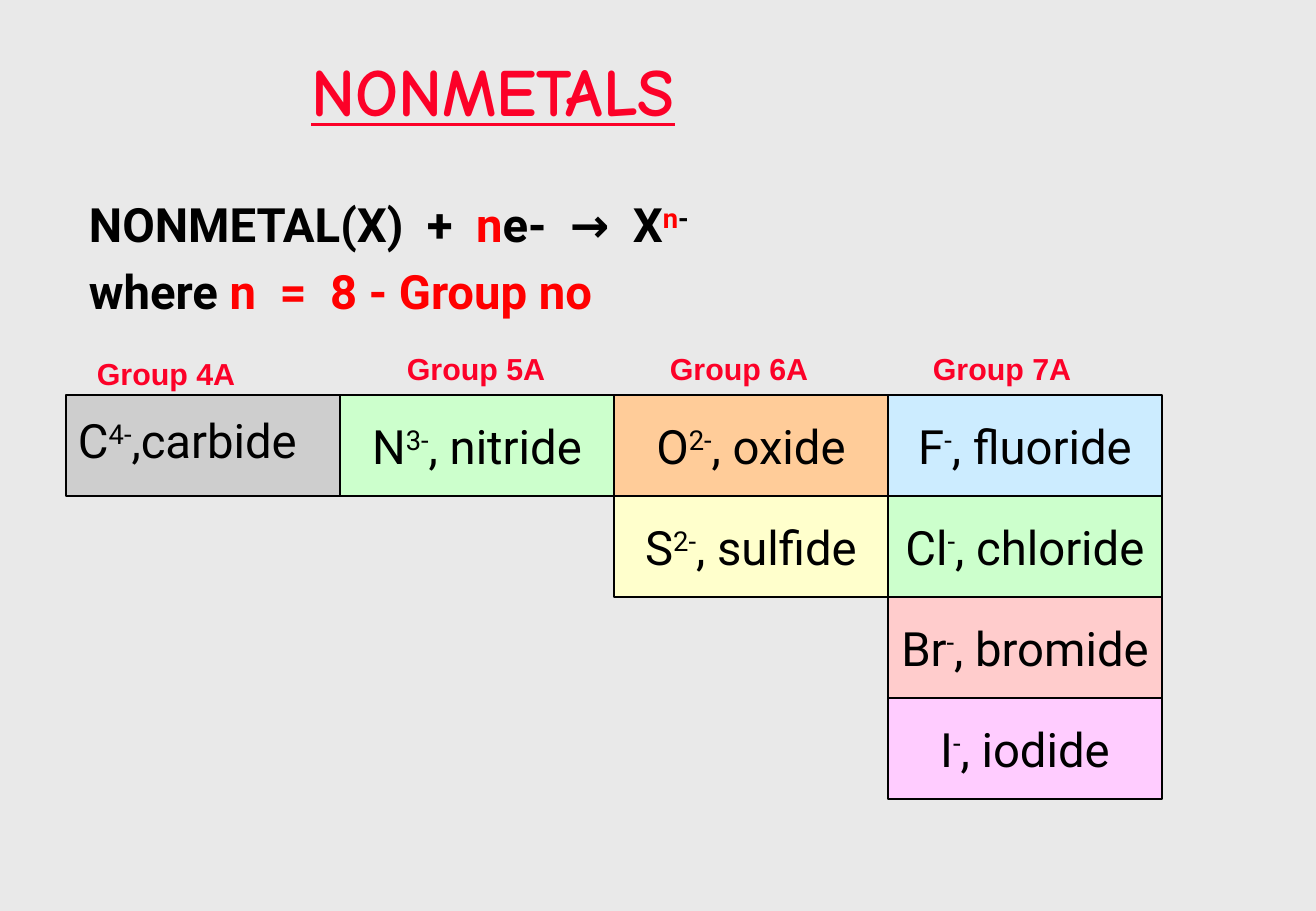
from lxml import etree
from pptx import Presentation
from pptx.dml.color import RGBColor
from pptx.enum.shapes import MSO_SHAPE
from pptx.enum.text import MSO_ANCHOR, PP_ALIGN
from pptx.oxml.ns import qn
from pptx.util import Emu, Pt

RECTANGLE = MSO_SHAPE.RECTANGLE
TOP, MIDDLE = MSO_ANCHOR.TOP, MSO_ANCHOR.MIDDLE
LEFT, CENTER = PP_ALIGN.LEFT, PP_ALIGN.CENTER

EMU_PER_PX = 7526
BACKGROUND = RGBColor(0xE9, 0xE9, 0xE9)
BLACK = RGBColor(0x00, 0x00, 0x00)
CRIMSON = RGBColor(0xFC, 0x01, 0x28)
RED = RGBColor(0xFF, 0x00, 0x00)
GREY = RGBColor(0xCE, 0xCE, 0xCE)
GREEN = RGBColor(0xCC, 0xFF, 0xCC)
ORANGE = RGBColor(0xFF, 0xCC, 0x99)
YELLOW = RGBColor(0xFF, 0xFF, 0xCC)
BLUE = RGBColor(0xCC, 0xEC, 0xFF)
PINK = RGBColor(0xFF, 0xCC, 0xCC)
VIOLET = RGBColor(0xFF, 0xCC, 0xFF)

GRID_LEFT, GRID_TOP = 66, 395
CELL_WIDTH, CELL_HEIGHT = 274, 101

GROUP_LABELS = [
    ("Group 4A", 85, 349),
    ("Group 5A", 395, 344),
    ("Group 6A", 658, 344),
    ("Group 7A", 921, 344),
]
IONS = [
    (1, 0, GREEN, "N", "3-", ", nitride"),
    (2, 0, ORANGE, "O", "2-", ", oxide"),
    (2, 1, YELLOW, "S", "2-", ", sulfide"),
    (3, 0, BLUE, "F", "-", ", fluoride"),
    (3, 1, GREEN, "Cl", "-", ", chloride"),
    (3, 2, PINK, "Br", "-", ", bromide"),
    (3, 3, VIOLET, "I", "-", ", iodide"),
]
EQUATION = [
    [
        ("NONMETAL(X)  +  ", BLACK, False),
        ("n", RED, False),
        ("e-  →  X", BLACK, False),
        ("n", RED, True),
        ("-", BLACK, True),
    ],
    [("where ", BLACK, False), ("n  =  8 - Group no", RED, False)],
]


def px(length):
    return Emu(length * EMU_PER_PX)


def ion_runs(symbol, charge, name):
    return [(symbol, BLACK, False), (charge, BLACK, True), (name, BLACK, False)]


class SlideBuilder:
    font_name = "Roboto"
    font_size = 28

    def __init__(self, slide):
        self.slide = slide
        slide.background.fill.solid()
        slide.background.fill.fore_color.rgb = BACKGROUND

    def add_runs(self, paragraph, runs, bold=False, font_name=font_name, font_size=font_size):
        for text, color, raised in runs:
            run = paragraph.add_run()
            run.text = text
            run.font.name = font_name
            run.font.size = Pt(font_size)
            run.font.bold = bold
            run.font.color.rgb = color
            if raised:
                run._r.get_or_add_rPr().set("baseline", "30000")

    def text(self, box, lines, align=LEFT, anchor=TOP, **style):
        shape = self.slide.shapes.add_textbox(*map(px, box))
        frame = shape.text_frame
        frame.word_wrap = True
        frame.vertical_anchor = anchor
        for index, runs in enumerate(lines):
            paragraph = frame.add_paragraph() if index else frame.paragraphs[0]
            paragraph.alignment = align
            self.add_runs(paragraph, runs, **style)
        return frame

    def title(self, box, text):
        frame = self.text(box, [[(text, CRIMSON, False)]], CENTER, MIDDLE,
                          bold=True, font_name="Comic Neue", font_size=40)
        paragraph = frame.paragraphs[0]
        paragraph.line_spacing = 0.9
        run = paragraph.runs[0]
        run.font.underline = True
        effects = etree.Element(qn("a:effectLst"))
        shadow = etree.SubElement(effects, qn("a:outerShdw"), dist="38100", dir="2700000")
        etree.SubElement(shadow, qn("a:srgbClr"), val=str(BLACK))
        run._r.get_or_add_rPr().find(qn("a:solidFill")).addnext(effects)

    def equation(self, box, lines):
        frame = self.text(box, lines, bold=True)
        for paragraph in frame.paragraphs:
            paragraph.line_spacing = 0.9
            paragraph.space_before = Pt(9)

    def cell(self, column, row, color, runs=()):
        left = GRID_LEFT + column * CELL_WIDTH
        top = GRID_TOP + row * CELL_HEIGHT
        shape = self.slide.shapes.add_shape(
            RECTANGLE, px(left), px(top), px(CELL_WIDTH), px(CELL_HEIGHT))
        shape.shadow.inherit = False
        shape.fill.solid()
        shape.fill.fore_color.rgb = color
        shape.line.color.rgb = BLACK
        shape.line.width = Pt(1)
        frame = shape.text_frame
        frame.word_wrap = False
        frame.vertical_anchor = MIDDLE
        frame.paragraphs[0].alignment = CENTER
        self.add_runs(frame.paragraphs[0], runs)


def main():
    presentation = Presentation()
    presentation.slide_width = px(1316)
    presentation.slide_height = px(911)
    blank_layout = presentation.slide_layouts[6]
    builder = SlideBuilder(presentation.slides.add_slide(blank_layout))

    builder.title((153, 44, 680, 101), "NONMETALS")
    builder.equation((77, 196, 1032, 112), EQUATION)
    builder.cell(0, 0, GREY)
    builder.text((66, 405, 258, 69), [ion_runs("C", "4-", ",carbide")])
    for column, row, color, *ion in IONS:
        builder.cell(column, row, color, ion_runs(*ion))
    for label, left, top in GROUP_LABELS:
        builder.text((left, top, 170, 49), [[(label, CRIMSON, False)]],
                     bold=True, font_name="Arial", font_size=18)

    presentation.save("out.pptx")


if __name__ == "__main__":
    main()
